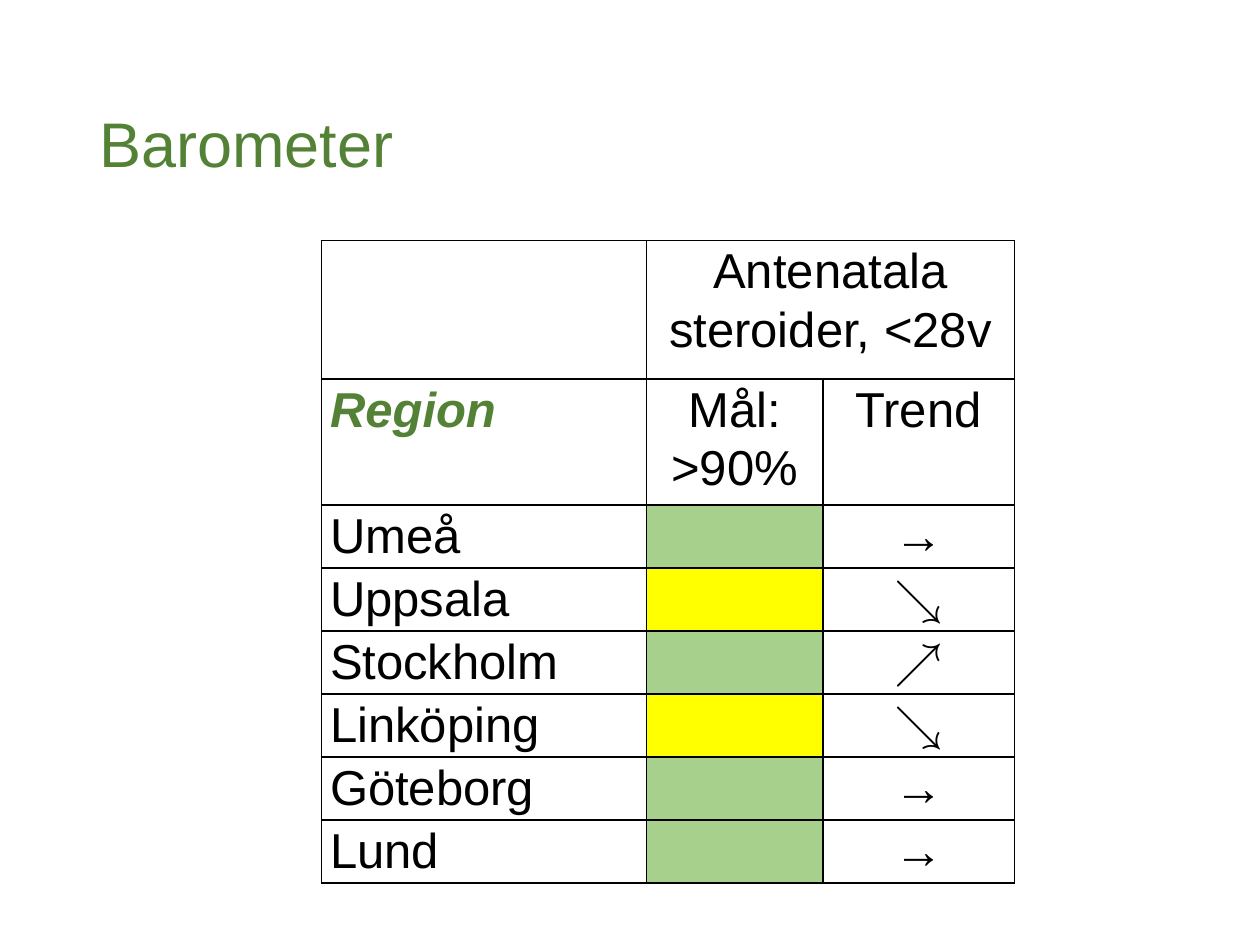
"""Build the Barometer slide with its regional table of steroid treatment."""
from dataclasses import dataclass
from typing import Any

from lxml.etree import SubElement
from pptx import Presentation
from pptx.dml.color import RGBColor
from pptx.enum.text import MSO_ANCHOR, PP_ALIGN
from pptx.oxml.ns import qn
from pptx.util import Inches, Pt

BLACK = RGBColor(0x00, 0x00, 0x00)
DARK_GREEN = RGBColor(0x53, 0x81, 0x35)
GREEN = RGBColor(0xA8, 0xD0, 0x8D)
YELLOW = RGBColor(0xFF, 0xFF, 0x00)

COLUMN_WIDTHS = [2.58, 1.4, 1.52]
ROW_HEIGHTS = [1.1, 0.73] + [0.45] * 6
REGIONS = [
    ("Umeå", GREEN, "→"),
    ("Uppsala", YELLOW, "↘"),
    ("Stockholm", GREEN, "↗"),
    ("Linköping", YELLOW, "↘"),
    ("Göteborg", GREEN, "→"),
    ("Lund", GREEN, "→"),
]


@dataclass
class SlideBuilder:
    page: Any
    font: str = "Arial"
    title_size: float = 36
    table_size: float = 28
    border_width: float = 1

    def add_span(self, para, text, size, color, emphasis=False):
        span = para.add_run()
        span.text = text
        span.font.name = self.font
        span.font.size = Pt(size)
        span.font.color.rgb = color
        span.font.bold = span.font.italic = emphasis

    def title(self, text, left, top, width, height):
        box = self.page.shapes.add_textbox(
            Inches(left), Inches(top), Inches(width), Inches(height))
        frame = box.text_frame
        frame.word_wrap = True
        frame.vertical_anchor = MSO_ANCHOR.MIDDLE
        frame.margin_bottom = Inches(0.6)
        para = frame.paragraphs[0]
        para.line_spacing = 0.9
        self.add_span(para, text, self.title_size, DARK_GREEN)

    def table(self, left, top, widths, heights):
        frame = self.page.shapes.add_table(
            len(heights), len(widths), Inches(left), Inches(top),
            Inches(sum(widths)), Inches(sum(heights)))
        table = frame.table
        table.first_row = table.horz_banding = False
        for column, width in zip(table.columns, widths):
            column.width = Inches(width)
        for row, height in zip(table.rows, heights):
            row.height = Inches(height)
        for cell in table.iter_cells():
            self.border(cell)
            cell.fill.background()
        return table

    def border(self, cell):
        properties = cell._tc.get_or_add_tcPr()
        for side in ("a:lnL", "a:lnR", "a:lnT", "a:lnB"):
            line = SubElement(properties, qn(side), w=str(Pt(self.border_width)))
            fill = SubElement(line, qn("a:solidFill"))
            SubElement(fill, qn("a:srgbClr"), val=str(BLACK))

    def cell_text(self, cell, text, align=PP_ALIGN.CENTER, color=BLACK,
                  emphasis=False):
        cell.margin_left = cell.margin_right = Inches(0.07)
        cell.margin_top = cell.margin_bottom = 0
        para = cell.text_frame.paragraphs[0]
        para.alignment = align
        para.line_spacing = 1.07
        self.add_span(para, text, self.table_size, color, emphasis)

    def cell_fill(self, cell, color):
        cell.fill.solid()
        cell.fill.fore_color.rgb = color


def main():
    deck = Presentation()
    deck.slide_width, deck.slide_height = Inches(10), Inches(7.5)
    builder = SlideBuilder(deck.slides.add_slide(deck.slide_layouts[6]))
    builder.title("Barometer", 0.69, 0.72, 8.62, 1.45)

    table = builder.table(2.55, 1.91, COLUMN_WIDTHS, ROW_HEIGHTS)
    table.cell(0, 1).merge(table.cell(0, 2))
    builder.cell_text(table.cell(0, 1), "Antenatala steroider, <28v")
    builder.cell_text(table.cell(1, 0), "Region", PP_ALIGN.LEFT, DARK_GREEN, True)
    builder.cell_text(table.cell(1, 1), "Mål: >90%")
    builder.cell_text(table.cell(1, 2), "Trend")
    for row, (region, status, trend) in enumerate(REGIONS, start=2):
        builder.cell_text(table.cell(row, 0), region, PP_ALIGN.LEFT)
        builder.cell_fill(table.cell(row, 1), status)
        builder.cell_text(table.cell(row, 2), trend)
    deck.save("out.pptx")


if __name__ == "__main__":
    main()
